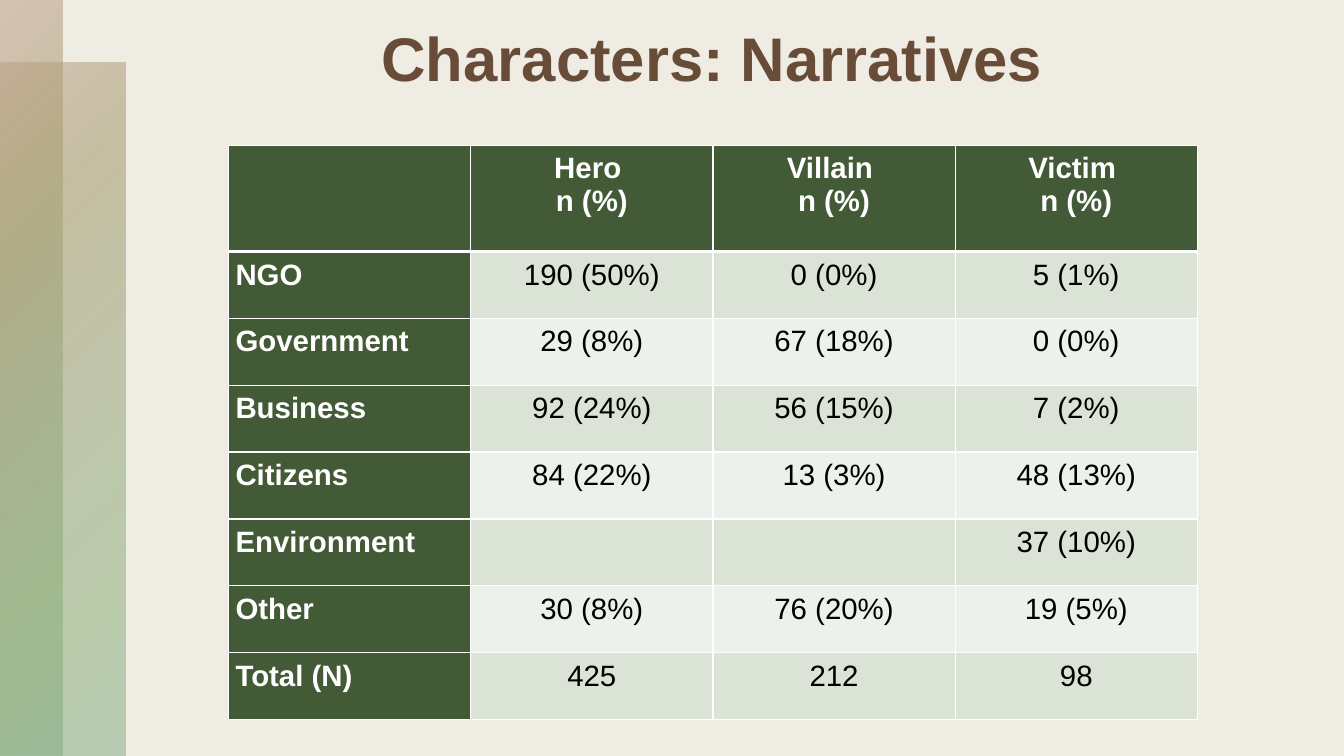
import lxml.etree
import pptx
import pptx.dml.color
import pptx.enum.shapes
import pptx.enum.text
import pptx.oxml
import pptx.oxml.ns
import pptx.util

RGBColor = pptx.dml.color.RGBColor
ALIGN = pptx.enum.text.PP_ALIGN
ANCHOR = pptx.enum.text.MSO_ANCHOR

WIDTH, HEIGHT = pptx.util.Inches(13.33), pptx.util.Inches(7.5)
FONT = "Arial"
CREAM = RGBColor(0xEE, 0xEC, 0xE3)
BROWN = RGBColor(0x68, 0x4C, 0x38)
FOREST = RGBColor(0x43, 0x5A, 0x36)
SAGE = RGBColor(0xDA, 0xE3, 0xD6)
MIST = RGBColor(0xED, 0xF1, 0xEC)
WHITE = RGBColor(0xFF, 0xFF, 0xFF)
BLACK = RGBColor(0, 0, 0)

# Side band gradient: position %, colour, opacity %
BAND_STOPS = [
    (0, RGBColor(0xBC, 0x9B, 0x84), 50),
    (25, RGBColor(0xAB, 0xA1, 0x75), 60),
    (50, RGBColor(0x9B, 0xA5, 0x7D), 55),
    (81, RGBColor(0x88, 0xAC, 0x75), 50),
    (99, RGBColor(0x81, 0xAC, 0x84), 50),
]
BAND = 0.62 / 13.33  # width of one band step, as a share of the slide width

ROWS = [
    ("", "Hero \nn (%)", "Villain \nn (%)", "Victim \nn (%)"),
    ("NGO", "190 (50%)", "0 (0%)", "5 (1%)"),
    ("Government", "29 (8%)", "67 (18%)", "0 (0%)"),
    ("Business", "92 (24%)", "56 (15%)", "7 (2%)"),
    ("Citizens", "84 (22%)", "13 (3%)", "48 (13%)"),
    ("Environment", "", "", "37 (10%)"),
    ("Other", "30 (8%)", "76 (20%)", "19 (5%)"),
    ("Total (N)", "425", "212", "98"),
]


def place(left, top, width, height):
    """Turn shares of the slide into lengths."""
    return (round(left * WIDTH), round(top * HEIGHT),
            round(width * WIDTH), round(height * HEIGHT))


def write(frame, text, size, color, bold=False, align=ALIGN.LEFT):
    for index, line in enumerate(text.split("\n")):
        para = frame.paragraphs[0] if index == 0 else frame.add_paragraph()
        para.alignment = align
        span = para.add_run()
        span.text = line
        span.font.name = FONT
        span.font.size = pptx.util.Pt(size)
        span.font.bold = bold
        span.font.color.rgb = color


def add_band(page, *area):
    band = page.shapes.add_shape(
        pptx.enum.shapes.MSO_SHAPE.RECTANGLE, *place(*area))
    band.shadow.inherit = False
    band.line.fill.background()
    # Translucent gradient spreading from the top left corner
    stops = "".join(
        f'<a:gs pos="{spot * 1000}"><a:srgbClr val="{color}">'
        f'<a:alpha val="{opacity * 1000}"/></a:srgbClr></a:gs>'
        for spot, color, opacity in BAND_STOPS)
    gradient = pptx.oxml.parse_xml(
        f'<a:gradFill {pptx.oxml.ns.nsdecls("a")} rotWithShape="1">'
        f'<a:gsLst>{stops}</a:gsLst><a:path path="circle">'
        '<a:fillToRect r="100000" b="100000"/></a:path></a:gradFill>')
    outline = band.line._get_or_add_ln()
    outline.addprevious(gradient)


def add_title(page, text, *area):
    box = page.shapes.add_textbox(*place(*area))
    box.text_frame.word_wrap = True
    box.text_frame.vertical_anchor = ANCHOR.TOP
    write(box.text_frame, text, 44, BROWN, bold=True, align=ALIGN.CENTER)


def set_borders(cell, **widths):
    properties = cell._tc.get_or_add_tcPr()
    for side in ("L", "R", "T", "B"):
        width = pptx.util.Pt(widths.get(side, 1))
        properties.append(pptx.oxml.parse_xml(
            f'<a:ln{side} {pptx.oxml.ns.nsdecls("a")} w="{width}"><a:solidFill>'
            f'<a:srgbClr val="{WHITE}"/></a:solidFill></a:ln{side}>'))


def style_cell(cell, text, row, column):
    heading = row == 0 or column == 0
    widths = {0: {"B": 3}, 1: {"T": 3}}.get(row, {})
    set_borders(cell, **widths)
    cell.fill.solid()
    cell.fill.fore_color.rgb = FOREST if heading else SAGE if row % 2 else MIST
    cell.margin_left = cell.margin_right = pptx.util.Inches(0.07)
    cell.margin_top = cell.margin_bottom = pptx.util.Inches(0.07)
    cell.vertical_anchor = ANCHOR.TOP
    if text:
        write(cell.text_frame, text, 21, WHITE if heading else BLACK,
              bold=heading, align=ALIGN.CENTER if column else ALIGN.LEFT)


def add_grid(page, rows, header_share, *area):
    left, top, width, height = place(*area)
    table = page.shapes.add_table(
        len(rows), len(rows[0]), left, top, width, height).table
    # Equal columns, a taller header and equal body rows
    for column in table.columns:
        column.width = width // len(rows[0])
    header = round(height * header_share)
    for index, row in enumerate(table.rows):
        row.height = (height - header) // (len(rows) - 1) if index else header
    for row, texts in enumerate(rows):
        for column, text in enumerate(texts):
            style_cell(table.cell(row, column), text, row, column)


def main():
    deck = pptx.Presentation()
    deck.slide_width, deck.slide_height = WIDTH, HEIGHT
    page = deck.slides.add_slide(deck.slide_layouts[6])
    page.background.fill.solid()
    page.background.fill.fore_color.rgb = CREAM

    # Overlapping side bands
    add_band(page, 0, 0.083, 2 * BAND, 0.917)
    add_band(page, 0, 0, BAND, 1)

    # Title and table
    add_title(page, "Characters: Narratives", 0.141, 0.02, 0.778, 0.227)
    add_grid(page, ROWS, 0.185, 0.17, 0.192, 0.721, 0.76)

    deck.save("out.pptx")


if __name__ == "__main__":
    main()
